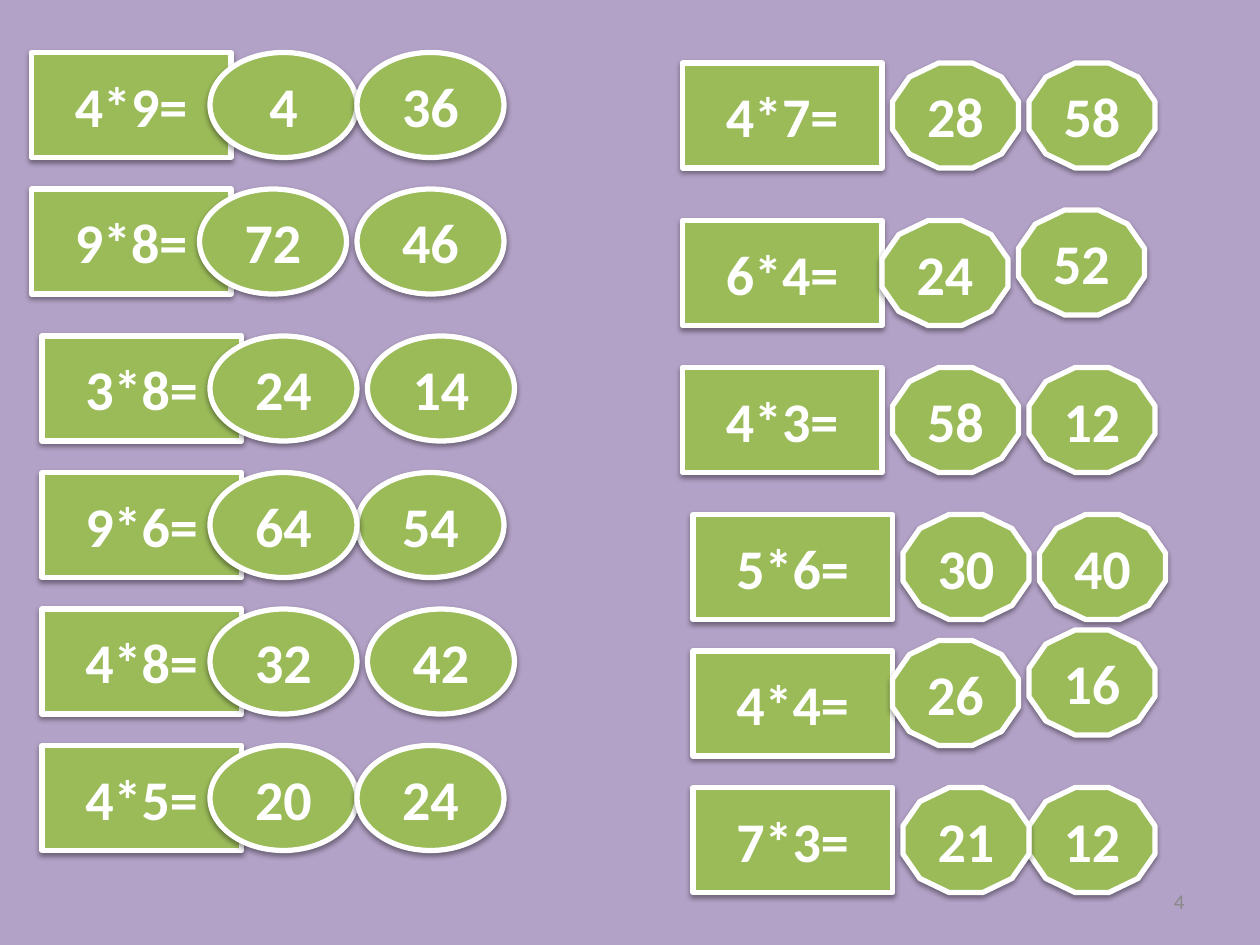
from typing import NamedTuple

from lxml import etree
from pptx import Presentation
from pptx.dml.color import RGBColor
from pptx.enum import shapes, text
from pptx.oxml import parse_xml
from pptx.oxml.ns import nsdecls
from pptx.util import Inches, Pt

# The slide is a grid of 120 columns by 90 rows
COLUMNS, ROWS = 120, 90
CARD_ROWS = 10
PROBLEM_COLUMNS = 19

LAVENDER, GREEN, WHITE, GREY = "B3A2C7", "9BBB59", "FFFFFF", "898989"
CARD_FONT = {"name": "Calibri", "size": Pt(32), "bold": True}
NUMBER_FONT = {"name": "Calibri", "size": Pt(12), "bold": False}


class Answer(NamedTuple):
    value: str
    column: int
    lift: int = 0  # rows above the problem card


class Problem(NamedTuple):
    question: str
    column: int
    row: int
    answers: tuple[Answer, Answer]  # back to front


class Group(NamedTuple):
    answer_kind: shapes.MSO_SHAPE
    answer_columns: int
    problems: tuple[Problem, ...]


GROUPS = (
    Group(shapes.MSO_SHAPE.OVAL, 14, (
        Problem("4*9=", 3, 5, (Answer("4", 20), Answer("36", 34))),
        Problem("9*8=", 3, 18, (Answer("72", 19), Answer("46", 34))),
        Problem("3*8=", 4, 32, (Answer("24", 20), Answer("14", 35))),
        Problem("9*6=", 4, 45, (Answer("54", 34), Answer("64", 20))),
        Problem("4*8=", 4, 58, (Answer("32", 20), Answer("42", 35))),
        Problem("4*5=", 4, 71, (Answer("20", 20), Answer("24", 34))),
    )),
    Group(shapes.MSO_SHAPE.DODECAGON, 12, (
        Problem("4*7=", 65, 6, (Answer("28", 85), Answer("58", 98))),
        Problem("6*4=", 65, 21, (Answer("24", 84), Answer("52", 97, 1))),
        Problem("4*3=", 65, 35, (Answer("58", 85), Answer("12", 98))),
        Problem("5*6=", 66, 49, (Answer("30", 86), Answer("40", 99))),
        Problem("4*4=", 66, 62, (Answer("26", 85, 1), Answer("16", 98, 2))),
        Problem("7*3=", 66, 75, (Answer("12", 98), Answer("21", 86))),
    )),
)


def colour(value: str) -> RGBColor:
    return RGBColor.from_string(value)


def write(frame, words: str, font: dict, ink: str, align) -> None:
    frame.word_wrap = True
    frame.vertical_anchor = text.MSO_ANCHOR.MIDDLE
    paragraph = frame.paragraphs[0]
    paragraph.alignment = align
    run = paragraph.add_run()
    run.text = words
    for attribute, value in font.items():
        setattr(run.font, attribute, value)
    run.font.color.rgb = colour(ink)


def add_shadow(card) -> None:
    card.shadow.inherit = False
    effects = card.element.spPr.find(
        "{http://schemas.openxmlformats.org/drawingml/2006/main}effectLst")
    effects.append(parse_xml(
        f'<a:outerShdw {nsdecls("a")} blurRad="{Pt(3.1)}" dist="{Pt(1.6)}" '
        'dir="5400000" rotWithShape="0"><a:srgbClr val="000000">'
        '<a:alpha val="38000"/></a:srgbClr></a:outerShdw>'))


def add_card(slide, kind, column: int, row: int, columns: int, words: str) -> None:
    card = slide.shapes.add_shape(
        kind, cell_width * column, cell_height * row,
        cell_width * columns, cell_height * CARD_ROWS)
    card.fill.solid()
    card.fill.fore_color.rgb = colour(GREEN)
    card.line.color.rgb = colour(WHITE)
    card.line.width = Pt(3)
    add_shadow(card)
    write(card.text_frame, words, CARD_FONT, WHITE, text.PP_ALIGN.CENTER)


# Slide and background
prs = Presentation()
prs.slide_width, prs.slide_height = Inches(10), Inches(7.5)
cell_width = prs.slide_width // COLUMNS
cell_height = prs.slide_height // ROWS
slide = prs.slides.add_slide(prs.slide_layouts[6])
slide.background.fill.solid()
slide.background.fill.fore_color.rgb = colour(LAVENDER)

# Problem cards, each with two possible answers
for group in GROUPS:
    for problem in group.problems:
        add_card(slide, shapes.MSO_SHAPE.RECTANGLE, problem.column, problem.row,
                 PROBLEM_COLUMNS, problem.question)
    for problem in group.problems:
        for answer in problem.answers:
            add_card(slide, group.answer_kind, answer.column,
                     problem.row - answer.lift, group.answer_columns, answer.value)

# Slide number
page_number = slide.shapes.add_textbox(
    Inches(7.17), Inches(6.95), Inches(2.33), Inches(0.4))
write(page_number.text_frame, "4", NUMBER_FONT, GREY, text.PP_ALIGN.RIGHT)

prs.save("out.pptx")
